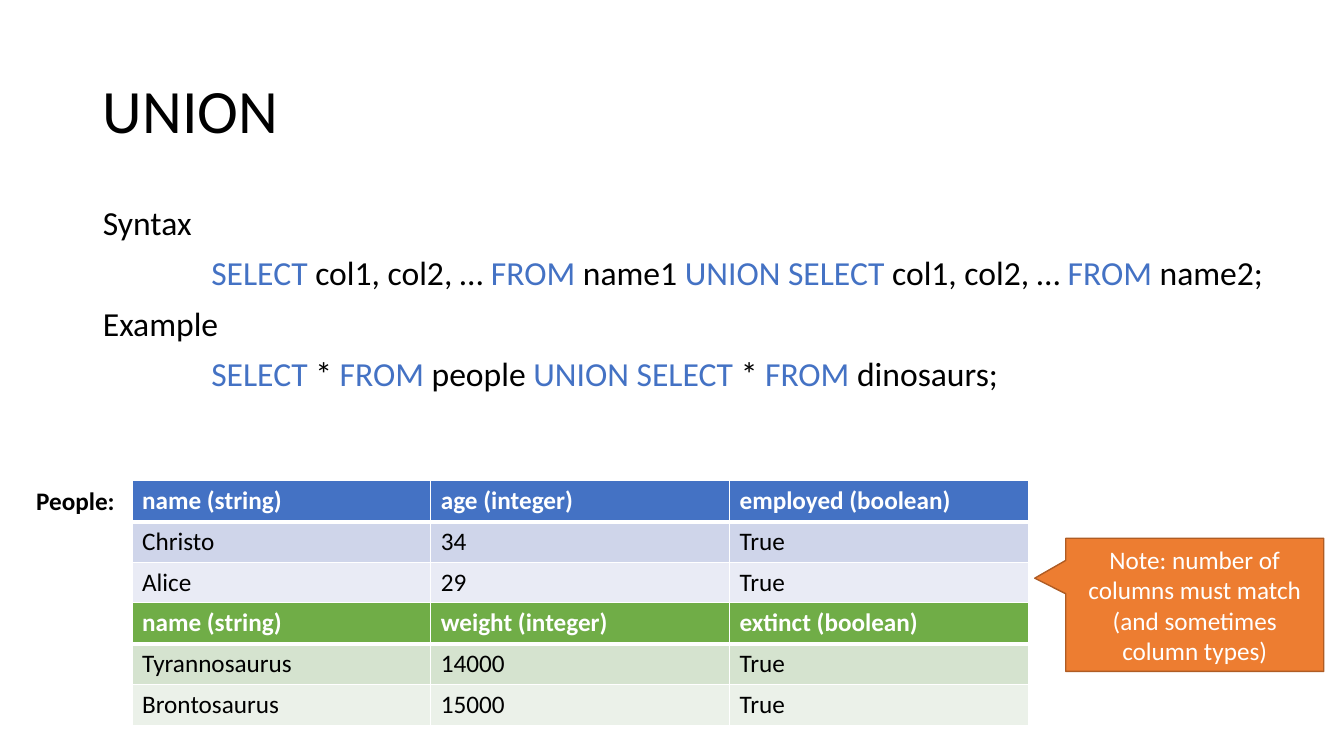
from lxml.etree import SubElement
from pptx import Presentation
from pptx.dml.color import RGBColor
from pptx.enum.shapes import MSO_SHAPE
from pptx.enum.text import MSO_ANCHOR, MSO_AUTO_SIZE, PP_ALIGN
from pptx.oxml.ns import qn
from pptx.util import Inches, Pt

COLORS = {
    "black": "000000", "white": "FFFFFF", "blue": "4472C4",
    "blue_band": "CFD5EA", "blue_pale": "E9EBF5",
    "green": "70AD47", "green_band": "D5E3CF", "green_pale": "EBF1E9",
    "orange": "ED7D31", "rust": "AF5C24",
}


def add_run(paragraph, text, size, color="black", bold=False):
    run = paragraph.add_run()
    run.text = text
    run.font.name = "Calibri"
    run.font.size = Pt(size)
    run.font.bold = bold
    run.font.color.rgb = RGBColor.from_string(COLORS[color])


def add_border(cell, side, width):
    """Draw a white line, width in points, on side L, R, T or B."""
    line = SubElement(cell._tc.get_or_add_tcPr(), qn(f"a:ln{side}"), w=str(Pt(width)))
    fill = SubElement(line, qn("a:solidFill"))
    SubElement(fill, qn("a:srgbClr"), val=COLORS["white"])


presentation = Presentation()
presentation.slide_width = Inches(13.33)
presentation.slide_height = Inches(7.5)
slide = presentation.slides.add_slide(presentation.slide_layouts[1])

# Title
title = slide.shapes.title
title.left, title.top, title.width, title.height = map(Inches, (0.92, 0.4, 11.5, 1.45))
title.text_frame.auto_size = MSO_AUTO_SIZE.NONE
title.text_frame.vertical_anchor = MSO_ANCHOR.MIDDLE
paragraph = title.text_frame.paragraphs[0]
paragraph.alignment = PP_ALIGN.LEFT
paragraph.line_spacing = 0.9
add_run(paragraph, "UNION", 44)

# Syntax and example, each line with its indent in inches
body_lines = [
    (0, [("Syntax", "black")]),
    (1, [(" SELECT ", "blue"), ("col1, col2, … ", "black"), ("FROM", "blue"),
         (" name1 ", "black"), ("UNION SELECT ", "blue"),
         ("col1, col2, … ", "black"), ("FROM ", "blue"), ("name2;", "black")]),
    (0, [("Example", "black")]),
    (1, [(" SELECT ", "blue"), ("* ", "black"), ("FROM", "blue"),
         (" people ", "black"), ("UNION SELECT", "blue"), (" * ", "black"),
         ("FROM", "blue"), (" dinosaurs;", "black")]),
]
body = slide.placeholders[1]
body.left, body.top, body.width, body.height = map(Inches, (0.92, 2, 11.88, 4.76))
body.text_frame.auto_size = MSO_AUTO_SIZE.NONE
for index, (indent, line) in enumerate(body_lines):
    paragraph = body.text_frame.add_paragraph() if index else body.text_frame.paragraphs[0]
    paragraph.line_spacing = 0.9
    paragraph.space_before = Pt(10)
    properties = paragraph._p.get_or_add_pPr()
    properties.set("marL", str(Inches(indent)))
    properties.set("indent", "0")
    SubElement(properties, qn("a:buNone"))
    for text, color in line:
        add_run(paragraph, text, 24, color)

# People and dinosaur tables
tables = [
    (4.77, ("blue", "blue_band", "blue_pale"), [
        ("name (string)", "age (integer)", "employed (boolean)"),
        ("Christo", "34", "True"),
        ("Alice", "29", "True"),
    ]),
    (5.98, ("green", "green_band", "green_pale"), [
        ("name (string)", "weight (integer)", "extinct (boolean)"),
        ("Tyrannosaurus", "14000", "True"),
        ("Brontosaurus", "15000", "True"),
    ]),
]
for top, row_fills, rows in tables:
    frame = slide.shapes.add_table(
        3, 3, Inches(1.31), Inches(top), Inches(8.89), Inches(1.22))
    for row_index, (row_fill, values) in enumerate(zip(row_fills, rows)):
        is_header = row_index == 0
        for column_index, value in enumerate(values):
            cell = frame.table.cell(row_index, column_index)
            add_border(cell, "L", 1)
            add_border(cell, "R", 1)
            add_border(cell, "T", 3 if row_index == 1 else 1)
            add_border(cell, "B", 3 if is_header else 1)
            cell.fill.solid()
            cell.fill.fore_color.rgb = RGBColor.from_string(COLORS[row_fill])
            add_run(cell.text_frame.paragraphs[0], value, 18,
                    "white" if is_header else "black", is_header)

# Table label
label = slide.shapes.add_textbox(Inches(0.26), Inches(4.77), Inches(0.99), Inches(0.4))
label.text_frame.word_wrap = False
label.text_frame.auto_size = MSO_AUTO_SIZE.SHAPE_TO_FIT_TEXT
add_run(label.text_frame.paragraphs[0], "People:", 18, bold=True)

# Note
note = slide.shapes.add_shape(
    MSO_SHAPE.RECTANGULAR_CALLOUT, Inches(10.57), Inches(5.34), Inches(2.56), Inches(1.32))
note.adjustments[0] = -0.62
note.adjustments[1] = -0.2
note.shadow.inherit = False
note.fill.solid()
note.fill.fore_color.rgb = RGBColor.from_string(COLORS["orange"])
note.line.color.rgb = RGBColor.from_string(COLORS["rust"])
note.line.width = Pt(1)
note.text_frame.word_wrap = True
note.text_frame.vertical_anchor = MSO_ANCHOR.MIDDLE
paragraph = note.text_frame.paragraphs[0]
paragraph.alignment = PP_ALIGN.CENTER
add_run(paragraph, "Note: number of columns must match (and sometimes column types)", 18, "white")

presentation.save("out.pptx")
